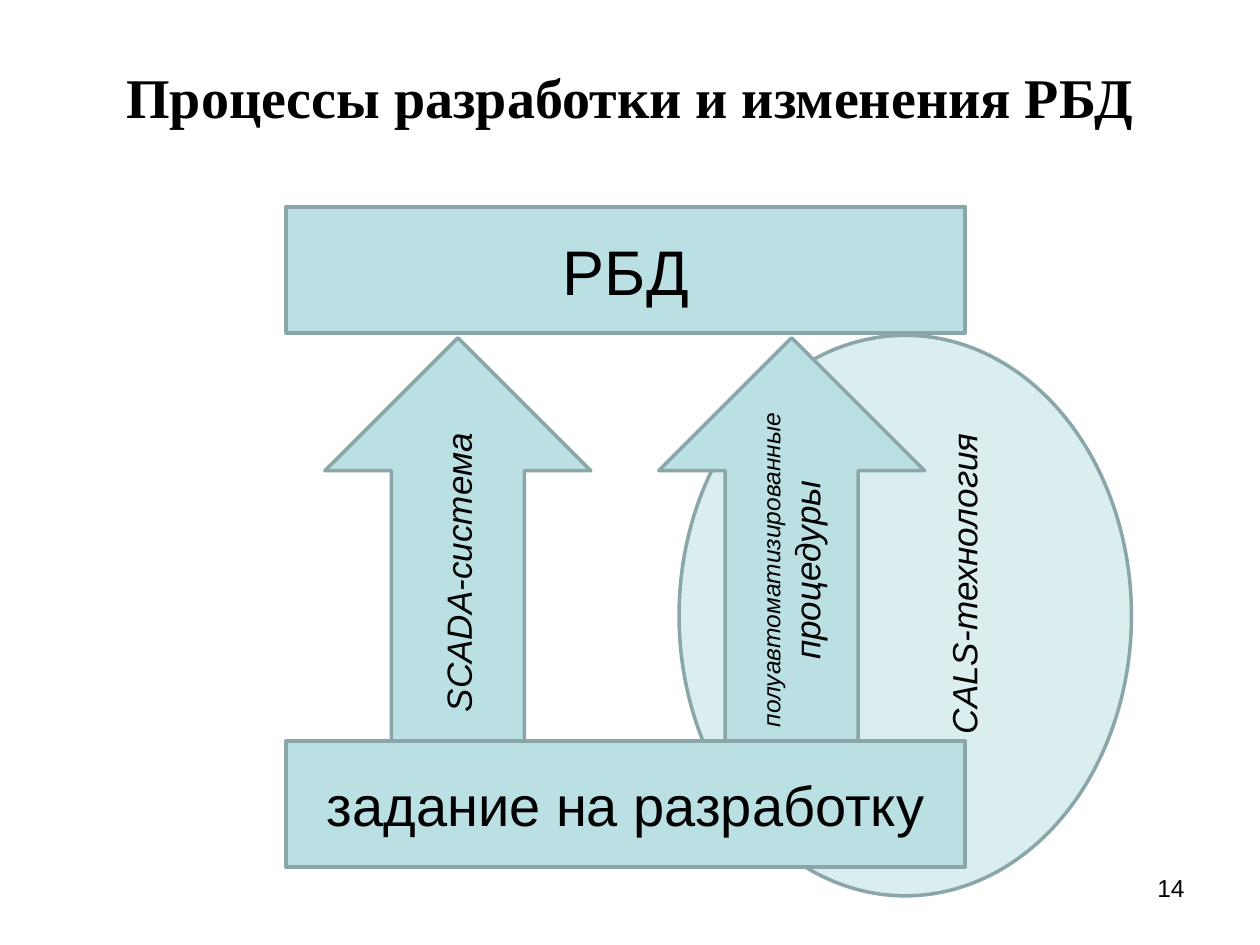
import pptx
import pptx.dml.color
import pptx.enum.shapes
import pptx.enum.text
import pptx.util

Cm = pptx.util.Cm
SHAPE = pptx.enum.shapes.MSO_SHAPE
ALIGN = pptx.enum.text.PP_ALIGN
MIDDLE = pptx.enum.text.MSO_ANCHOR.MIDDLE


def rgb(hex_string):
    """Turn a hex string into a colour."""
    return pptx.dml.color.RGBColor.from_string(hex_string)


def write(frame, runs, align=ALIGN.CENTER, font="Arial", bold=False, italic=False, upward=False):
    """Write (text, size) runs into the frame's first paragraph."""
    frame.word_wrap = True
    frame.vertical_anchor = MIDDLE
    if upward:
        frame._txBody.bodyPr.set("vert", "vert270")
    paragraph = frame.paragraphs[0]
    paragraph.alignment = align
    for text, size in runs:
        run = paragraph.add_run()
        run.text = text
        run.font.name = font
        run.font.size = pptx.util.Pt(size)
        run.font.bold = bold
        run.font.italic = italic
        run.font.color.rgb = rgb("000000")


def add_block(slide, preset, left, top, width, height, fill="BBE0E3"):
    """Add an outlined shape, measured in centimetres."""
    block = slide.shapes.add_shape(preset, Cm(left), Cm(top), Cm(width), Cm(height))
    block.shadow.inherit = False
    block.fill.solid()
    block.fill.fore_color.rgb = rgb(fill)
    block.line.color.rgb = rgb("8AA6A8")
    block.line.width = pptx.util.Pt(2)
    return block


def add_label(slide, left, top, width, height, runs, **style):
    """Add free text, measured in centimetres."""
    label = slide.shapes.add_textbox(Cm(left), Cm(top), Cm(width), Cm(height))
    write(label.text_frame, runs, **style)


def add_heading(slide, left, top, width, height):
    """Place and fill the title."""
    heading = slide.shapes.title
    heading.left, heading.top = Cm(left), Cm(top)
    heading.width, heading.height = Cm(width), Cm(height)
    write(heading.text_frame, [("Процессы разработки и изменения РБД", 32)],
          font="Times New Roman", bold=True)


def add_process_diagram(slide, left, top, width, height):
    """Draw the task, the two routes upward and the resulting database."""
    bar_height, arrow_width, arrow_height = 2.54, 5.36, 8.13
    task_top = top + height - bar_height
    arrow_top = task_top - arrow_height

    scada = add_block(slide, SHAPE.UP_ARROW, left + 0.78, arrow_top, arrow_width, arrow_height)
    write(scada.text_frame, [("SCADA-система", 20)], italic=True, upward=True)

    database = add_block(slide, SHAPE.RECTANGLE, left, top, width, bar_height)
    write(database.text_frame, [("РБД", 36)])

    add_block(slide, SHAPE.OVAL, left + 7.92, top + 2.59, 9.12, 11.3, "DAEDEF")

    procedures = add_block(slide, SHAPE.UP_ARROW, left + 7.51, arrow_top,
                           arrow_width, arrow_height)
    procedures.text_frame.margin_top = 0
    procedures.text_frame.margin_bottom = Cm(0.1)
    write(procedures.text_frame, [("полуавтоматизированные ", 14), ("процедуры", 20)],
          italic=True, upward=True)

    task = add_block(slide, SHAPE.RECTANGLE, left, task_top, width, bar_height)
    write(task.text_frame, [("задание на разработку", 32)])

    add_label(slide, left + 12.9, top + 4.2, 1.5, 6.8, [("CALS-технология", 20)],
              italic=True, upward=True)


def main():
    """Build and save the slide."""
    deck = pptx.Presentation()
    deck.slide_width, deck.slide_height = Cm(25.4), Cm(19.05)
    slide = deck.slides.add_slide(deck.slide_layouts[5])
    add_heading(slide, 1.27, 1.12, 22.86, 1.63)
    add_process_diagram(slide, 5.77, 4.17, 13.69, 13.31)
    add_label(slide, 18.2, 17.35, 5.93, 1.1, [("14", 14)], align=ALIGN.RIGHT)
    deck.save("out.pptx")


if __name__ == "__main__":
    main()
